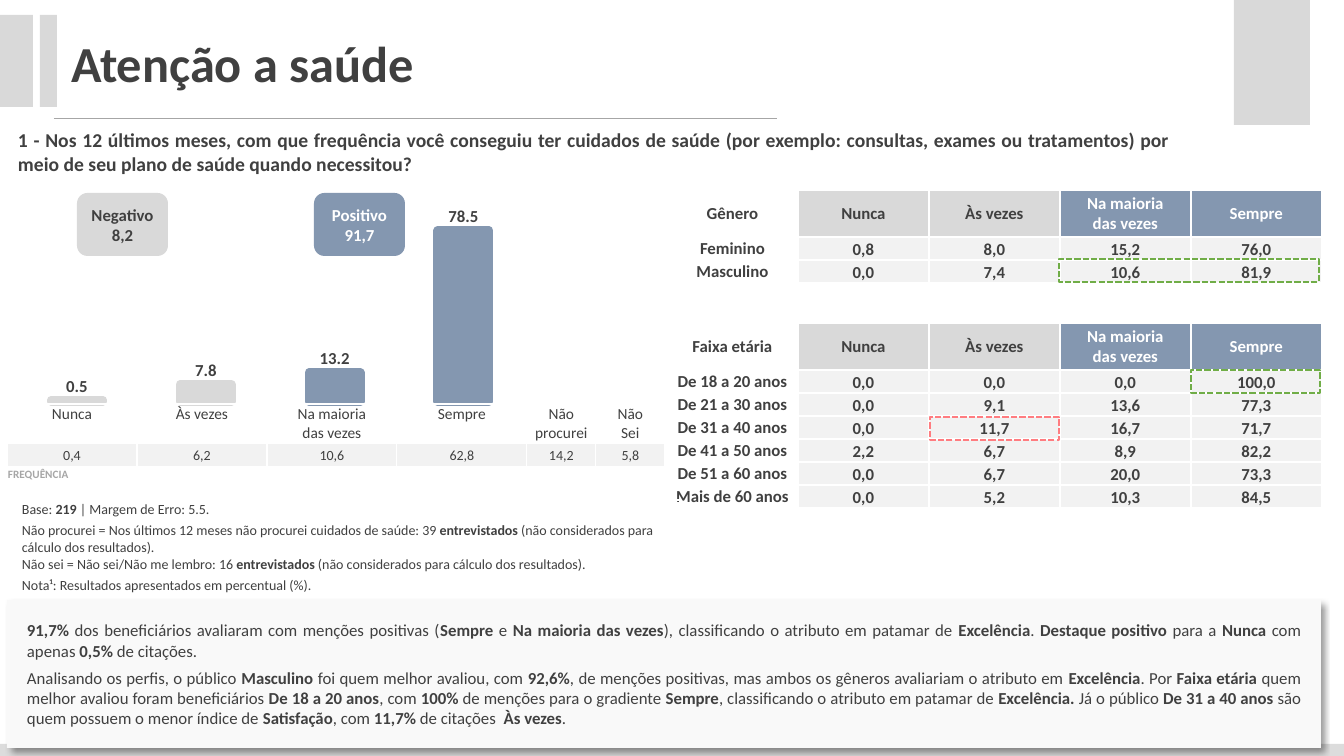
import pptx
import pptx.chart.data
import pptx.dml.color
import pptx.enum.chart
import pptx.enum.dml
import pptx.enum.shapes
import pptx.enum.text
import pptx.oxml
import pptx.oxml.ns
import pptx.util

RGB = pptx.dml.color.RGBColor.from_string
SHAPE = pptx.enum.shapes.MSO_SHAPE
ALIGN = pptx.enum.text.PP_ALIGN
ANCHOR = pptx.enum.text.MSO_ANCHOR
DRAWING = pptx.oxml.ns.nsdecls("a")


class Theme:
    font = "Calibri"
    ink, white, muted = RGB("404040"), RGB("FFFFFF"), RGB("A6A6A6")
    blue, gray, pale, panel, strip = map(RGB, ("8497B0", "D9D9D9", "F2F2F2", "F9F9F9", "DCDCDC"))
    good, bad = RGB("70AD47"), RGB("FF7C80")
    title, question, body, category, small, caption = 36, 14, 12, 11, 10, 8


def px(*lengths):
    """Turn slide pixels (100.8 to the inch) into EMU."""
    emu = [round(length * 914400 / 100.8) for length in lengths]
    return emu if len(emu) > 1 else emu[0]


def write(text_frame, text, size, color=Theme.ink, bold=False, align=ALIGN.LEFT):
    """One paragraph per line; **marks** set bold, \\v breaks a line."""
    for number, line in enumerate(text.split("\n")):
        paragraph = text_frame.add_paragraph() if number else text_frame.paragraphs[0]
        paragraph.alignment = align
        for index, piece in enumerate(line.split("**")):
            for row, part in enumerate(piece.split("\v")):
                if row:
                    paragraph.add_line_break()
                if part:
                    run = paragraph.add_run()
                    run.text = part
                    run.font.name, run.font.size = Theme.font, pptx.util.Pt(size)
                    run.font.color.rgb, run.font.bold = color, bold or index % 2 == 1


presentation = pptx.Presentation()
presentation.slide_width, presentation.slide_height = px(1344, 756)
slide = presentation.slides.add_slide(presentation.slide_layouts[5])
shapes = slide.shapes

# Title
title = shapes.title
title.left, title.top, title.width, title.height = px(61, 27, 372, 72)
title.text_frame.auto_size = pptx.enum.text.MSO_AUTO_SIZE.NONE
title.text_frame.word_wrap = False
title.text_frame.vertical_anchor = ANCHOR.TOP
write(title.text_frame, "Atenção a saúde", Theme.title, bold=True)

# Filled blocks: decoration and analysis panel, then badges over the chart
blocks = {}
for name, kind, box, fill in [
    ("strip", SHAPE.RECTANGLE, (0, 744, 1344, 12), Theme.strip),
    ("wide bar", SHAPE.RECTANGLE, (-1, 15, 34, 92), Theme.gray),
    ("thin bar", SHAPE.RECTANGLE, (40, 15, 17, 92), Theme.gray),
    ("corner", SHAPE.RECTANGLE, (1234, 0, 76, 125), Theme.gray),
    ("analysis", SHAPE.RECTANGLE, (7, 600, 1314, 148), Theme.panel),
    ("Positivo 91,7", SHAPE.ROUNDED_RECTANGLE, (314, 193, 91, 63), Theme.blue),
    ("Negativo 8,2", SHAPE.ROUNDED_RECTANGLE, (77, 193, 91, 63), Theme.gray),
]:
    shape = blocks[name] = shapes.add_shape(kind, *px(*box))
    shape.shadow.inherit = False
    shape.fill.solid()
    shape.fill.fore_color.rgb = fill
    shape.line.fill.background()
    shape.text_frame.vertical_anchor = ANCHOR.MIDDLE
    if kind == SHAPE.ROUNDED_RECTANGLE:
        color = Theme.white if fill == Theme.blue else Theme.ink
        write(shape.text_frame, name, Theme.body, color, True, ALIGN.CENTER)

# Rule under the title
rule = shapes.add_connector(pptx.enum.shapes.MSO_CONNECTOR.STRAIGHT, *px(54, 118, 777, 118))
rule.line.color.rgb, rule.line.width = Theme.muted, pptx.util.Pt(0.5)
rule.element.spPr.append(pptx.oxml.parse_xml(f"<a:effectLst {DRAWING}/>"))

# Analysis text and its shadow
analysis = blocks["analysis"]
analysis.element.spPr.find(pptx.oxml.ns.qn("a:effectLst")).append(pptx.oxml.parse_xml(
    f'<a:outerShdw {DRAWING} blurRad="50800" dist="38100" dir="2700000" algn="tl" rotWithShape="0">'
    '<a:srgbClr val="000000"><a:alpha val="40000"/></a:srgbClr></a:outerShdw>'))
frame = analysis.text_frame
frame.margin_left = frame.margin_right = px(20)
frame.margin_top = frame.margin_bottom = px(4)
write(frame, (
    "**91,7%** dos beneficiários avaliaram com menções positivas (**Sempre** e **Na maioria das vezes**), "
    "classificando o atributo em patamar de **Excelência**. **Destaque positivo **para a **Nunca** com "
    "apenas **0,5% **de citações.\n"
    "Analisando os perfis, o público** Masculino** foi quem melhor avaliou, com **92,6%**, de menções "
    "positivas, mas ambos os gêneros avaliariam o atributo em **Excelência**. Por **Faixa etária** quem "
    "melhor avaliou foram beneficiários **De 18 a 20 anos**, com **100% **de menções para o gradiente "
    "**Sempre**, classificando o atributo em patamar de **Excelência. **Já o público **De 31 a 40 anos** "
    "são quem possuem o menor índice de **Satisfação**, com **11,7% **de citações  **Às vezes**."
), Theme.body, align=ALIGN.JUSTIFY)
frame.paragraphs[1].space_before = pptx.util.Pt(5)

# Question
frame = shapes.add_textbox(*px(7, 122, 1174, 58)).text_frame
frame.word_wrap = True
frame.margin_left = frame.margin_right = px(11)
frame.margin_top = frame.margin_bottom = px(6)
write(frame, "1 - Nos 12 últimos meses, com que frequência você conseguiu ter cuidados de saúde (por exemplo: "
      "consultas, exames ou tratamentos) por meio de seu plano de saúde quando necessitou?",
      Theme.question, bold=True, align=ALIGN.JUSTIFY)

# Column chart of the answers
data = pptx.chart.data.CategoryChartData(number_format="0.0")
data.categories = ["1", "2", "3", "4"]
data.add_series("Series 1", (78.5, 13.2, 7.8, 0.5))
chart = shapes.add_chart(pptx.enum.chart.XL_CHART_TYPE.COLUMN_CLUSTERED, *px(-5, 182, 550, 273), data).chart
chart.has_legend = chart.has_title = False
chart.font.name, chart.font.size = Theme.font, pptx.util.Pt(Theme.small)
chart.category_axis.reverse_order = True
chart.value_axis.minimum_scale, chart.value_axis.maximum_scale = 0, 90
chart.value_axis.has_major_gridlines = False
chart.category_axis.visible = chart.value_axis.visible = False
plot = chart.plots[0]
plot.vary_by_categories = False
plot.gap_width, plot.overlap = 150, -25
plot.has_data_labels = True
labels = plot.data_labels
labels.show_value = True
labels.number_format, labels.number_format_is_linked = "0.0", False
labels.position = pptx.enum.chart.XL_LABEL_POSITION.OUTSIDE_END
labels.font.name, labels.font.size = Theme.font, pptx.util.Pt(Theme.body)
labels.font.bold, labels.font.color.rgb = True, Theme.ink
for index, color in enumerate([Theme.blue, Theme.blue, Theme.gray, Theme.gray]):
    bar = plot.series[0].points[index].format
    bar.fill.solid()
    bar.fill.fore_color.rgb = bar.line.color.rgb = color
    bar.line.width = pptx.util.Pt(6)
for outline in chart.element.iter(pptx.oxml.ns.qn("a:ln")):
    outline.append(pptx.oxml.parse_xml(f"<a:round {DRAWING}/>"))
plot_area = chart.element.find(".//" + pptx.oxml.ns.qn("c:plotArea"))
for layout in plot_area.findall(pptx.oxml.ns.qn("c:layout")):
    plot_area.remove(layout)
plot_area.insert(0, pptx.oxml.parse_xml(
    f'<c:layout {pptx.oxml.ns.nsdecls("c")}><c:manualLayout><c:layoutTarget val="inner"/>'
    '<c:xMode val="edge"/><c:yMode val="edge"/><c:x val="0.032"/><c:y val="0.086"/>'
    '<c:w val="0.937"/><c:h val="0.718"/></c:manualLayout></c:layout>'))

# Tables: cell styles hold size, colour, bold, alignment, anchor and fill
styles = {
    "label": (Theme.body, Theme.ink, True, ALIGN.CENTER, ANCHOR.MIDDLE, None),
    "low": (Theme.body, Theme.ink, True, ALIGN.CENTER, ANCHOR.MIDDLE, Theme.gray),
    "high": (Theme.body, Theme.white, True, ALIGN.CENTER, ANCHOR.MIDDLE, Theme.blue),
    "value": (Theme.body, Theme.ink, True, ALIGN.CENTER, ANCHOR.BOTTOM, Theme.pale),
    "category": (Theme.category, Theme.ink, False, ALIGN.CENTER, ANCHOR.TOP, None),
    "share": (Theme.small, Theme.ink, False, ALIGN.CENTER, ANCHOR.MIDDLE, Theme.pale),
    "caption": (Theme.caption, Theme.muted, True, ALIGN.LEFT, ANCHOR.TOP, None),
    "note": (Theme.small, Theme.ink, False, ALIGN.LEFT, ANCHOR.TOP, None),
}
answers = ["Nunca", "Às vezes", "Na maioria\vdas vezes", "Sempre"]
header = ["label", "low", "low", "high", "high"]
profile = ["label"] + ["value"] * 4
tables = [
    # left, top, column widths, border points, rows of (height, styles, texts)
    (667, 190, [131] * 5, 1.5, [
        (47, header, ["Gênero"] + answers),
        (23, profile, ["Feminino", "0,8", "8,0", "15,2", "76,0"]),
        (23, profile, ["Masculino", "0,0", "7,4", "10,6", "81,9"]),
        (40, ["label"], [""]),
        (47, header, ["Faixa etária"] + answers),
        (23, profile, ["De 18 a 20 anos", "0,0", "0,0", "0,0", "100,0"]),
        (23, profile, ["De 21 a 30 anos", "0,0", "9,1", "13,6", "77,3"]),
        (23, profile, ["De 31 a 40 anos", "0,0", "11,7", "16,7", "71,7"]),
        (23, profile, ["De 41 a 50 anos", "2,2", "6,7", "8,9", "82,2"]),
        (23, profile, ["De 51 a 60 anos", "0,0", "6,7", "20,0", "73,3"]),
        (23, profile, ["Mais de 60 anos", "0,0", "5,2", "10,3", "84,5"])]),
    (21, 500, [659], 1, [
        (21, ["note"], ["Base: **219** | Margem de Erro: 5.5."]),
        (21, ["note"], ["Não procurei = Nos últimos 12 meses não procurei cuidados de saúde: 39** entrevistados** "
                        "(não considerados para cálculo dos resultados)."]),
        (21, ["note"], ["Não sei = Não sei/Não me lembro: 16** entrevistados** "
                        "(não considerados para cálculo dos resultados)."]),
        (21, ["note"], ["Nota¹: Resultados apresentados em percentual (%)."])]),
    (7, 404, [130] * 4 + [69] * 2, 1, [
        (39, ["category"] * 6,
         ["Nunca", "Às vezes", "Na maioria\ndas vezes", "Sempre", "Não procurei", "Não\nSei"]),
        (24, ["share"] * 6, ["0,4", "6,2", "10,6", "62,8", "14,2", "5,8"]),
        (24, ["caption"], ["FREQUÊNCIA"])]),
]
for left, top, widths, border, rows in tables:
    height = sum(row[0] for row in rows)
    table = shapes.add_table(len(rows), len(widths), *px(left, top, sum(widths), height)).table
    table.first_row = table.horz_banding = False
    for column, width in zip(table.columns, widths):
        column.width = px(width)
    for row, (height, names, texts) in enumerate(rows):
        table.rows[row].height = px(height)
        if len(texts) < len(widths):
            table.cell(row, 0).merge(table.cell(row, len(widths) - 1))
        for column in range(len(widths)):
            cell = table.cell(row, column)
            size, color, bold, align, anchor, fill = styles[names[min(column, len(names) - 1)]]
            cell.margin_left = cell.margin_right = cell.margin_top = px(1)
            cell.margin_bottom = 0
            cell.vertical_anchor = anchor
            for side in "LRTB":
                cell._tc.get_or_add_tcPr().append(pptx.oxml.parse_xml(
                    f'<a:ln{side} {DRAWING} w="{pptx.util.Pt(border)}"><a:solidFill>'
                    f'<a:srgbClr val="{Theme.white}"/></a:solidFill></a:ln{side}>'))
            if fill is None:
                cell.fill.background()
            else:
                cell.fill.solid()
                cell.fill.fore_color.rgb = fill
            if column < len(texts):
                write(cell.text_frame, texts[column], size, color, bold, align)

# Dashed highlights on the profile table
for box, color in [((1191, 370, 129, 23), Theme.good), ((930, 417, 129, 23), Theme.bad),
                   ((1059, 259, 260, 23), Theme.good)]:
    highlight = shapes.add_shape(SHAPE.RECTANGLE, *px(*box))
    highlight.shadow.inherit = False
    highlight.fill.background()
    highlight.line.color.rgb, highlight.line.width = color, pptx.util.Pt(1.5)
    highlight.line.dash_style = pptx.enum.dml.MSO_LINE.SQUARE_DOT

presentation.save("out.pptx")
